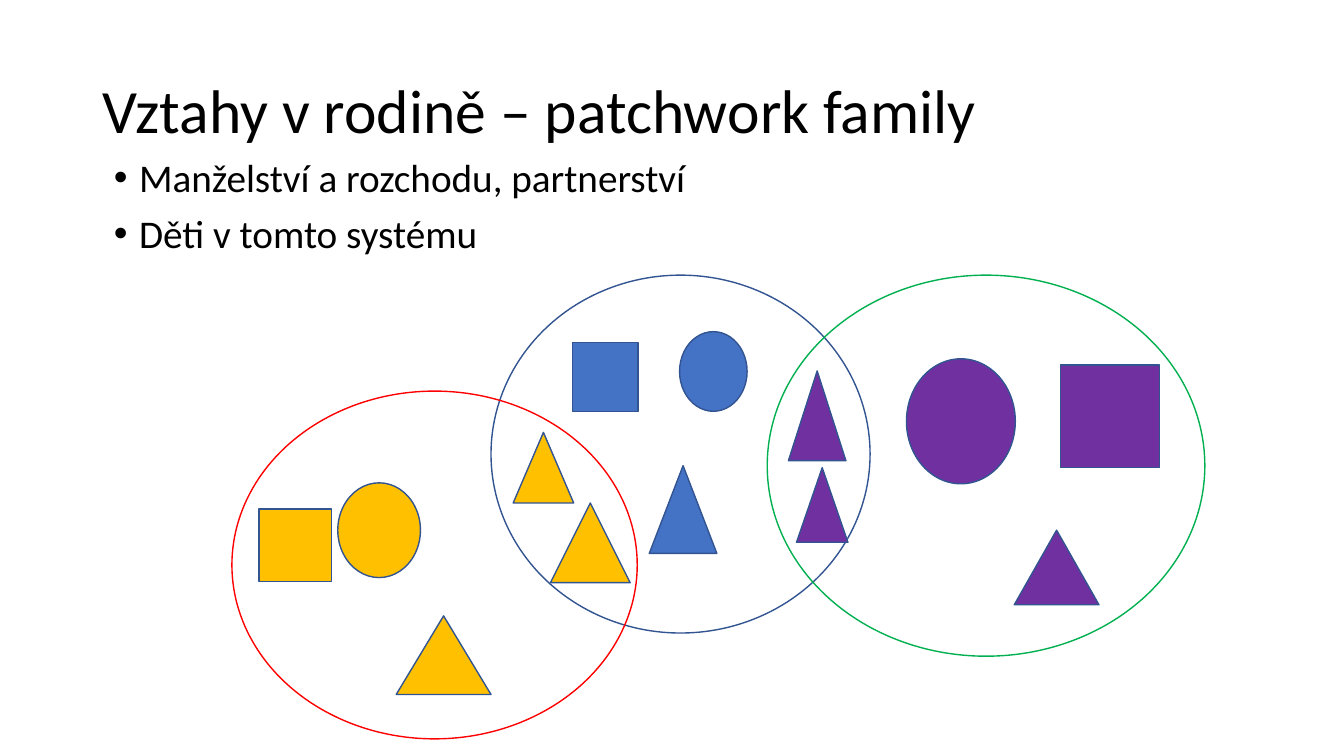
from pptx import Presentation
from pptx.dml.color import RGBColor
from pptx.enum.shapes import MSO_SHAPE as Shape
from pptx.enum.text import MSO_ANCHOR as Anchor, MSO_AUTO_SIZE as AutoSize, PP_ALIGN as Align
from pptx.util import Inches, Pt

BLACK = RGBColor(0x00, 0x00, 0x00)
OUTLINE = RGBColor(0x32, 0x54, 0x91)
RED = RGBColor(0xFF, 0x00, 0x00)
GREEN = RGBColor(0x00, 0xB0, 0x50)
BLUE = RGBColor(0x44, 0x72, 0xC4)
YELLOW = RGBColor(0xFF, 0xC0, 0x00)
PURPLE = RGBColor(0x70, 0x30, 0xA0)

presentation = Presentation()
presentation.slide_width = Inches(13.33)
presentation.slide_height = Inches(7.5)
slide = presentation.slides.add_slide(presentation.slide_layouts[1])


def fill_placeholder(placeholder, box, text, size, anchor):
    placeholder.left, placeholder.top, placeholder.width, placeholder.height = map(Inches, box)
    text_frame = placeholder.text_frame
    text_frame.text = text
    text_frame.auto_size = AutoSize.NONE
    text_frame.vertical_anchor = anchor
    for paragraph in text_frame.paragraphs:
        paragraph.alignment = Align.LEFT
        paragraph.line_spacing = 0.9
        font = paragraph.runs[0].font
        font.name = "Calibri"
        font.size = Pt(size)
        font.color.rgb = BLACK


def add_figure(kind, box, line_color, fill_color=None):
    shape = slide.shapes.add_shape(kind, *map(Inches, box))
    shape.shadow.inherit = False
    shape.line.color.rgb = line_color
    shape.line.width = Pt(1)
    if fill_color is None:
        shape.fill.background()
    else:
        shape.fill.solid()
        shape.fill.fore_color.rgb = fill_color


title = slide.shapes.title
body = slide.placeholders[1]
fill_placeholder(title, (0.92, 0.4, 11.5, 1.45),
                 "Vztahy v rodině – patchwork family", 44, Anchor.MIDDLE)
fill_placeholder(body, (1.03, 1.52, 11.5, 4.76),
                 "Manželství a rozchodu, partnerství\nDěti v tomto systému ", 28, Anchor.TOP)
for paragraph in body.text_frame.paragraphs:
    paragraph.space_before = Pt(10)
    properties = paragraph._p.get_or_add_pPr()
    properties.set("marL", str(Inches(0.25)))
    properties.set("indent", str(Inches(-0.25)))

households = [
    (OUTLINE, (4.87, 2.73, 3.76, 3.55)),
    (RED, (2.3, 3.88, 4.02, 3.45)),
    (GREEN, (7.61, 2.73, 4.34, 3.78)),
]
for line_color, box in households:
    add_figure(Shape.OVAL, box, line_color)

members = {
    BLUE: [
        (Shape.RECTANGLE, (5.68, 3.4, 0.65, 0.68)),
        (Shape.OVAL, (6.74, 3.29, 0.67, 0.79)),
        (Shape.ISOSCELES_TRIANGLE, (6.44, 4.62, 0.67, 0.87)),
    ],
    YELLOW: [
        (Shape.OVAL, (3.35, 4.79, 0.82, 0.94)),
        (Shape.RECTANGLE, (2.57, 5.05, 0.72, 0.72)),
        (Shape.ISOSCELES_TRIANGLE, (5.09, 4.29, 0.6, 0.7)),
        (Shape.ISOSCELES_TRIANGLE, (5.46, 4.99, 0.79, 0.79)),
        (Shape.ISOSCELES_TRIANGLE, (3.93, 6.11, 0.94, 0.78)),
    ],
    PURPLE: [
        (Shape.RECTANGLE, (10.52, 3.62, 0.98, 1.02)),
        (Shape.OVAL, (8.99, 3.56, 1.08, 1.24)),
        (Shape.ISOSCELES_TRIANGLE, (7.82, 3.68, 0.57, 0.89)),
        (Shape.ISOSCELES_TRIANGLE, (7.9, 4.64, 0.51, 0.74)),
        (Shape.ISOSCELES_TRIANGLE, (10.06, 5.26, 0.84, 0.74)),
    ],
}
for fill_color, figures in members.items():
    for kind, box in figures:
        add_figure(kind, box, OUTLINE, fill_color)

presentation.save("out.pptx")
